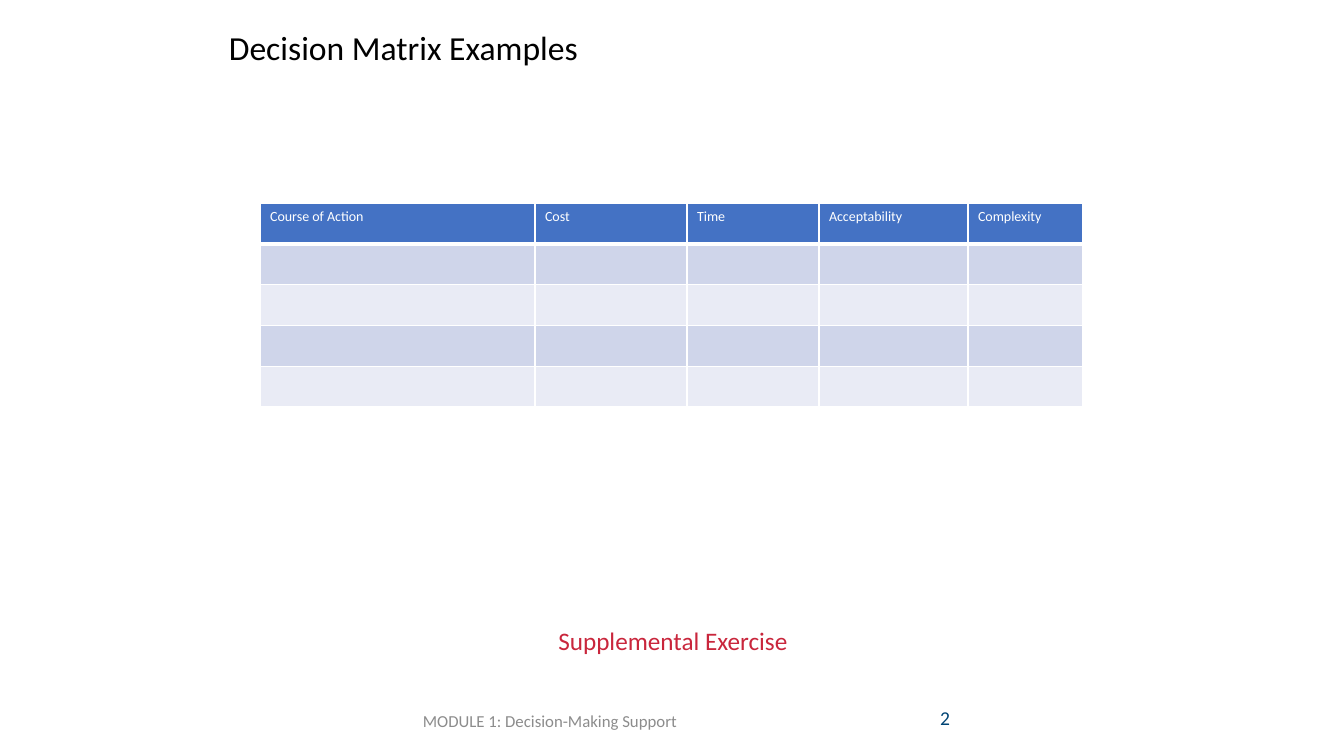
from dataclasses import dataclass

from lxml.etree import SubElement
from pptx import Presentation
from pptx.dml.color import RGBColor as RGB
from pptx.enum.text import MSO_ANCHOR as Anchor, PP_ALIGN as Align
from pptx.oxml.ns import qn
from pptx.util import Emu, Pt

SLIDE_WIDTH, SLIDE_HEIGHT = 1344, 756
EMU_PER_PX = 12192000 / SLIDE_WIDTH
CRITERIA = ["Course of Action", "Cost", "Time", "Acceptability", "Complexity"]
CRITERIA_WIDTHS = [275, 152, 132, 149, 115]
OPTION_COUNT = 4


@dataclass(frozen=True)
class Theme:
    """Colours, font and type sizes of the slide."""
    font: str = "Calibri"
    title: str = "000000"
    page: str = "004474"
    exercise: str = "C9263C"
    module: str = "8C8C8C"
    header: str = "4472C4"
    header_text: str = "FFFFFF"
    grid: str = "FFFFFF"
    bands: tuple = ("CFD5EA", "E9EBF5")
    title_size: int = 24
    exercise_size: int = 18
    page_size: int = 14
    module_size: int = 12
    header_size: int = 10


THEME = Theme()


def px(length):
    """Turn px into EMU."""
    return Emu(round(length * EMU_PER_PX))


def add_run(paragraph, text, size, color):
    """Add one styled run to a paragraph."""
    run = paragraph.add_run()
    run.text = text
    run.font.name = THEME.font
    run.font.size = Pt(size)
    run.font.color.rgb = RGB.from_string(color)


def add_label(slide, box, text, size, color, align=Align.LEFT,
              anchor=Anchor.TOP, line_spacing=1.0):
    """Place a single line of text in the given box."""
    frame = slide.shapes.add_textbox(*map(px, box)).text_frame
    frame.word_wrap = True
    frame.vertical_anchor = anchor
    paragraph = frame.paragraphs[0]
    paragraph.alignment = align
    paragraph.line_spacing = line_spacing
    add_run(paragraph, text, size, color)


def style_cell(cell, color, bottom_width):
    """Fill a cell and draw its four borders."""
    cell.fill.solid()
    cell.fill.fore_color.rgb = RGB.from_string(color)
    properties = cell._tc.get_or_add_tcPr()
    for position, side in enumerate("LRTB"):
        width = bottom_width if side == "B" else 1
        border = SubElement(properties, qn(f"a:ln{side}"), w=str(Pt(width)))
        border_fill = SubElement(border, qn("a:solidFill"))
        SubElement(border_fill, qn("a:srgbClr"), val=THEME.grid)
        properties.insert(position, border)


def add_matrix(slide, box):
    """Place the decision matrix with a header and banded empty rows."""
    row_count = OPTION_COUNT + 1
    matrix = slide.shapes.add_table(row_count, len(CRITERIA), *map(px, box)).table
    for column, width in zip(matrix.columns, CRITERIA_WIDTHS):
        column.width = px(width)
    for index, row in enumerate(matrix.rows):
        row.height = px(box[3] / row_count)
        is_header = index == 0
        color = THEME.header if is_header else THEME.bands[(index - 1) % 2]
        for cell, criterion in zip(row.cells, CRITERIA):
            style_cell(cell, color, 3 if is_header else 1)
            if is_header:
                paragraph = cell.text_frame.paragraphs[0]
                add_run(paragraph, criterion, THEME.header_size, THEME.header_text)


def add_footer(slide, box):
    """Place the module name and the page number along the bottom."""
    left, top, width, height = box
    add_label(slide, (left + 504, top, 235, height), "2",
              THEME.page_size, THEME.page, Align.RIGHT)
    add_label(slide, (left, top, width, height), "MODULE 1: Decision-Making Support",
              THEME.module_size, THEME.module, Align.CENTER, Anchor.MIDDLE)


def main():
    """Build and save the slide."""
    deck = Presentation()
    deck.slide_width, deck.slide_height = px(SLIDE_WIDTH), px(SLIDE_HEIGHT)
    slide = deck.slides.add_slide(deck.slide_layouts[6])
    add_label(slide, (219, 27, 907, 66), "Decision Matrix Examples",
              THEME.title_size, THEME.title, line_spacing=0.9)
    add_matrix(slide, (260, 203, sum(CRITERIA_WIDTHS), 204))
    add_label(slide, (324, 620, 698, 40), "Supplemental Exercise",
              THEME.exercise_size, THEME.exercise, Align.CENTER)
    add_footer(slide, (221, 701, 658, 40))
    deck.save("out.pptx")


if __name__ == "__main__":
    main()
